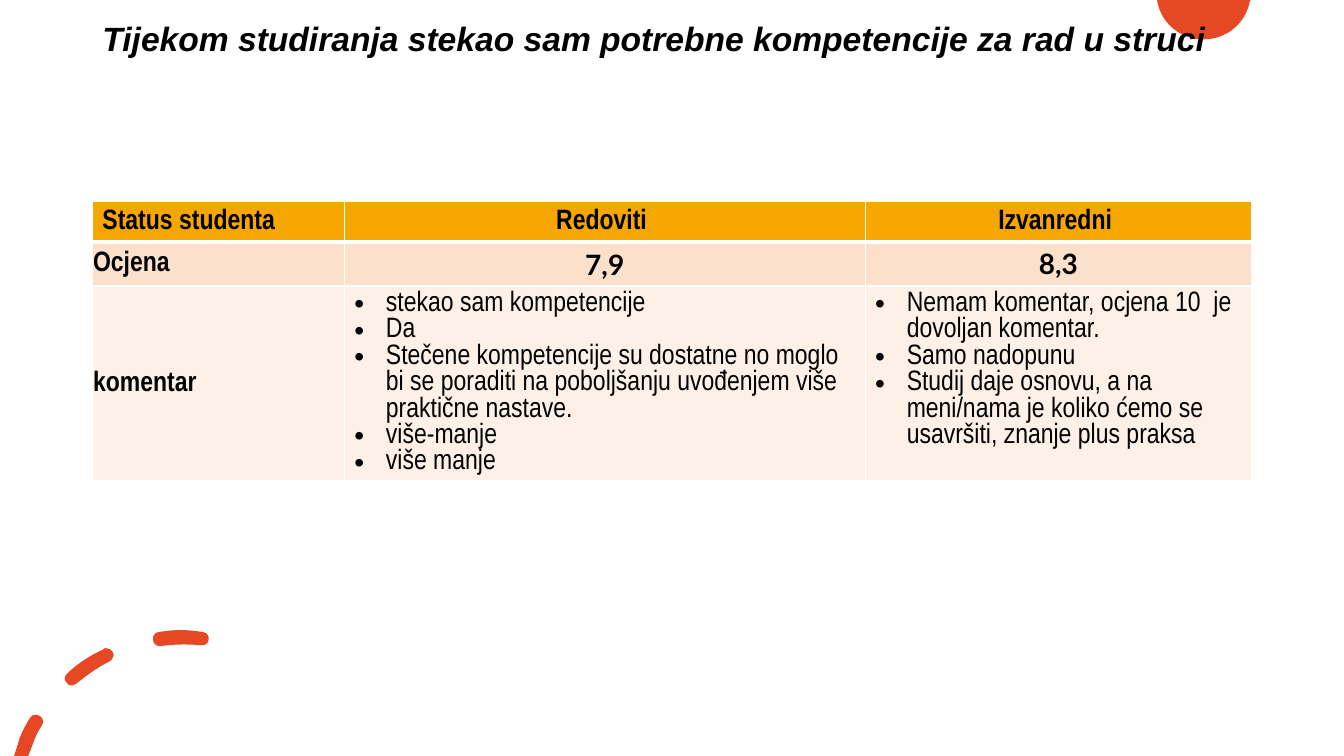
"""Builds the slide with survey scores and comments on acquired competences."""
from dataclasses import dataclass

from lxml import etree
from pptx import Presentation
from pptx.dml.color import RGBColor
from pptx.enum.text import MSO_ANCHOR, MSO_AUTO_SIZE, PP_ALIGN
from pptx.oxml.ns import qn
from pptx.slide import Slide
from pptx.table import _Cell
from pptx.text.text import Font, _Paragraph
from pptx.util import Pt

TOP, MIDDLE = MSO_ANCHOR.TOP, MSO_ANCHOR.MIDDLE
LEFT, CENTER = PP_ALIGN.LEFT, PP_ALIGN.CENTER
NO_AUTOFIT = MSO_AUTO_SIZE.NONE

BLACK, WHITE, RED = "000000", "FFFFFF", "E64823"
ROW_FILLS = ("F5A700", "FBE1CC", "FDF1E7")
MARGIN, CONTENT_W = 66, 828
COL_WIDTHS = (180, 372, 276)
ROW_H = 29
BULLET_INDENT = 22.5

Segment = tuple[float, ...]


@dataclass(frozen=True)
class Outline:
    """A closed outline; segments of two numbers are lines, of six are curves."""
    start: tuple[float, float]
    segments: tuple[Segment, ...]


@dataclass(frozen=True)
class CellText:
    """The content and format of one table cell."""
    lines: tuple[str, ...]
    align: PP_ALIGN = LEFT
    anchor: MSO_ANCHOR = MIDDLE
    font: str = "Arial Narrow"
    bullets: bool = False
    tight: bool = False


CORNER_DISC = (
    Outline((826.6, 0), (
        (893.5, 0), (892.8, 0.7),
        (889.9, 16.6, 876.2, 28.1, 859.7, 28.1),
        (843.1, 28.1, 829.4, 16.6, 826.6, 0.7))),
)
DASHED_ARC = (
    Outline((25.9, 510.5), (
        (24.5, 509.8, 22.3, 511.2, 21.6, 512.6),
        (18.7, 517, 16.6, 521.3, 14.4, 526.3),
        (10.1, 540), (20.2, 540), (23.8, 530.6),
        (25.2, 526.3, 27.4, 522, 30.2, 517.7),
        (31.7, 515.5, 30.2, 511.9, 28.1, 511.2),
        (27.4, 510.5, 26.6, 510.5, 25.9, 510.5))),
    Outline((75.6, 463), (
        (74.9, 463, 74.2, 463, 74.2, 463.7),
        (64.8, 468, 55.4, 473.8, 48.2, 481),
        (46.1, 482.4, 45.4, 486, 47.5, 487.4),
        (48.2, 488.9, 49.7, 489.6, 51.1, 489.6),
        (52.6, 489.6, 53.3, 488.9, 54.7, 488.2),
        (61.9, 482.4, 69.8, 476.6, 78.5, 472.3),
        (80.6, 470.9, 82.1, 468, 80.6, 465.8),
        (79.9, 463.7, 77.8, 463, 75.6, 463))),
    Outline((128.9, 450), (
        (123.8, 450, 118.8, 450.7, 113.8, 451.4),
        (110.9, 451.4, 108.7, 454.3, 109.4, 457.2),
        (109.4, 459.4, 111.6, 461.5, 113.8, 461.5),
        (114.5, 461.5),
        (124.6, 460.1, 133.9, 460.1, 143.3, 460.8),
        (146.2, 461.5, 149, 459.4, 149, 457.2),
        (149.8, 454.3, 147.6, 451.4, 144.7, 451.4),
        (139.7, 450.7, 133.9, 450, 128.9, 450))),
)

ROWS = (
    (CellText(("Status studenta",)),
     CellText(("Redoviti ",), CENTER),
     CellText(("Izvanredni ",), CENTER)),
    (CellText(("Ocjena",), tight=True),
     CellText(("7,9",), CENTER, font="Lato"),
     CellText(("8,3",), CENTER, TOP, "Lato")),
    (CellText(("komentar",), tight=True),
     CellText((
         "stekao sam kompetencije",
         "Da",
         "Stečene kompetencije su dostatne no moglo bi se poraditi na "
         "poboljšanju uvođenjem više praktične nastave.",
         "više-manje",
         "više manje"), anchor=TOP, bullets=True),
     CellText((
         "Nemam komentar, ocjena 10  je dovoljan komentar.",
         "Samo nadopunu",
         "Studij daje osnovu, a na meni/nama je koliko ćemo se usavršiti, "
         "znanje plus praksa"), anchor=TOP, bullets=True)),
)


def rgb(color: str) -> RGBColor:
    """Turn a hex string into a colour."""
    return RGBColor.from_string(color)


def set_font(font: Font, name: str, size: float, bold: bool, italic: bool = False) -> None:
    """Format a font in black."""
    font.name, font.size, font.bold, font.italic = name, Pt(size), bold, italic
    font.color.rgb = rgb(BLACK)


def add_decoration(s: Slide, outlines: tuple[Outline, ...]) -> None:
    """Draw a set of outlines as one red shape with true curves."""
    builder = s.shapes.build_freeform(*map(Pt, outlines[0].start))
    for i, outline in enumerate(outlines):
        if i:
            builder.move_to(*map(Pt, outline.start))
        builder.add_line_segments([(Pt(seg[-2]), Pt(seg[-1])) for seg in outline.segments])
    sp = builder.convert_to_shape()
    sp.shadow.inherit = False
    sp.fill.solid()
    sp.fill.fore_color.rgb = rgb(RED)
    sp.line.fill.background()
    segments = [seg for outline in outlines for seg in outline.segments]
    for seg, line in zip(segments, list(sp._element.iter(qn("a:lnTo")))):
        if len(seg) == 6:
            line.tag = qn("a:cubicBezTo")
            for i, (x, y) in enumerate((seg[:2], seg[2:4])):
                point = etree.Element(qn("a:pt"), x=str(Pt(x) - sp.left), y=str(Pt(y) - sp.top))
                line.insert(i, point)


def add_title(s: Slide, text: str) -> None:
    """Place the title in front of the decorations."""
    sp = s.shapes.title
    sp.left, sp.top, sp.width, sp.height = Pt(MARGIN), Pt(0), Pt(CONTENT_W), Pt(58)
    tf = sp.text_frame
    tf.text, tf.word_wrap, tf.auto_size = text, True, NO_AUTOFIT
    tf.vertical_anchor = MIDDLE
    p = tf.paragraphs[0]
    p.alignment, p.line_spacing = LEFT, 0.9
    set_font(p.font, "Arial", 24, True, True)
    s.shapes._spTree.append(sp._element)


def set_borders(cell: _Cell, top: float, bottom: float) -> None:
    """Give a cell white borders."""
    tc_pr = cell._tc.get_or_add_tcPr()
    for side, width in (("L", 1), ("R", 1), ("T", top), ("B", bottom)):
        ln = etree.SubElement(tc_pr, qn(f"a:ln{side}"), w=str(Pt(width)))
        fill = etree.SubElement(ln, qn("a:solidFill"))
        etree.SubElement(fill, qn("a:srgbClr"), val=WHITE)


def set_bullet(p: _Paragraph) -> None:
    """Give a paragraph a hanging bullet."""
    p_pr = p._p.get_or_add_pPr()
    p_pr.set("marL", str(Pt(BULLET_INDENT)))
    p_pr.set("indent", str(-Pt(BULLET_INDENT)))
    p_pr.insert(0, etree.Element(qn("a:buFont"), typeface="Arial"))
    p_pr.insert(1, etree.Element(qn("a:buChar"), char="•"))


def fill_cell(cell: _Cell, content: CellText, fill: str) -> None:
    """Write and format the text of a cell."""
    cell.fill.solid()
    cell.fill.fore_color.rgb = rgb(fill)
    cell.vertical_anchor = content.anchor
    if content.tight:
        cell.margin_left = cell.margin_top = cell.margin_right = Pt(0.5)
        cell.margin_bottom = Pt(0)
    cell.text_frame.text = "\n".join(content.lines)
    for p in cell.text_frame.paragraphs:
        p.alignment = content.align
        set_font(p.font, content.font, 20, not content.bullets)
        if content.bullets:
            set_bullet(p)


def add_survey_table(s: Slide) -> None:
    """Add the table of scores and comments."""
    table = s.shapes.add_table(len(ROWS), len(COL_WIDTHS), Pt(MARGIN), Pt(144),
                               Pt(CONTENT_W), Pt(ROW_H * len(ROWS))).table
    table.horz_banding = False
    for column, width in zip(table.columns, COL_WIDTHS):
        column.width = Pt(width)
    for i, (contents, fill) in enumerate(zip(ROWS, ROW_FILLS)):
        table.rows[i].height = Pt(ROW_H)
        for j, content in enumerate(contents):
            cell = table.cell(i, j)
            set_borders(cell, 3 if i == 1 else 1, 3 if i == 0 else 1)
            fill_cell(cell, content, fill)


def main() -> None:
    """Build and save the presentation."""
    prs = Presentation()
    prs.slide_width, prs.slide_height = Pt(960), Pt(540)
    s = prs.slides.add_slide(prs.slide_layouts[5])
    for outlines in (CORNER_DISC, DASHED_ARC):
        add_decoration(s, outlines)
    add_title(s, "Tijekom studiranja stekao sam potrebne kompetencije za rad u struci")
    add_survey_table(s)
    prs.save("out.pptx")


if __name__ == "__main__":
    main()
